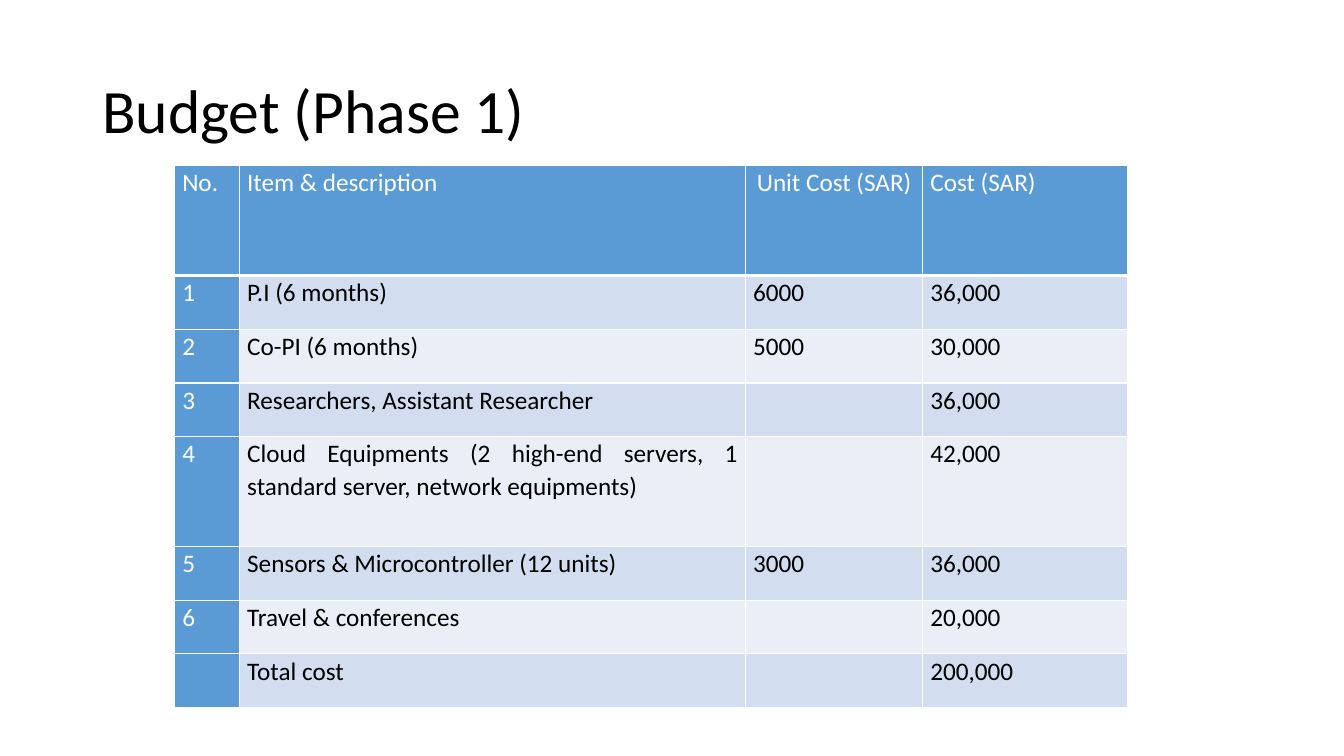
import lxml.etree
import pptx
import pptx.dml.color
import pptx.enum.text
import pptx.oxml.ns
import pptx.util

Pt = pptx.util.Pt
RGBColor = pptx.dml.color.RGBColor
ALIGN = pptx.enum.text.PP_ALIGN
ANCHOR = pptx.enum.text.MSO_ANCHOR

FONT = "Calibri"
BLACK = RGBColor(0x00, 0x00, 0x00)
WHITE = RGBColor(0xFF, 0xFF, 0xFF)
BLUE = RGBColor(0x5B, 0x9B, 0xD5)
BAND_DARK = RGBColor(0xD2, 0xDE, 0xEF)
BAND_LIGHT = RGBColor(0xEA, 0xEF, 0xF7)

BUDGET = [
    ("No.", "Item & description", "Unit Cost (SAR)", "Cost (SAR)"),
    ("1", "P.I (6 months)", "6000", "36,000"),
    ("2", "Co-PI (6 months)", "5000", "30,000"),
    ("3", "Researchers, Assistant Researcher", "", "36,000"),
    ("4", "Cloud Equipments (2 high-end servers, 1 standard server, network equipments)",
     "", "42,000"),
    ("5", "Sensors & Microcontroller (12 units)", "3000", "36,000"),
    ("6", "Travel & conferences", "", "20,000"),
    ("", "Total cost", "", "200,000"),
]
COLUMN_WIDTHS = [46.4, 361.4, 126.6, 146]
TALL_ROWS = (0, 4)
TALL, SHORT = 78.4, 38.4


def add_text(paragraph, text, size, color, spacing, alignment):
    paragraph.alignment = alignment
    paragraph.line_spacing = spacing
    run = paragraph.add_run()
    run.text = text
    run.font.name = FONT
    run.font.size = Pt(size)
    run.font.color.rgb = color


def add_border(cell, side, width):
    qn = pptx.oxml.ns.qn
    properties = cell._tc.get_or_add_tcPr()
    line = lxml.etree.SubElement(properties, qn("a:" + side), w=str(Pt(width)))
    fill = lxml.etree.SubElement(line, qn("a:solidFill"))
    lxml.etree.SubElement(fill, qn("a:srgbClr"), val=str(WHITE))


presentation = pptx.Presentation()
presentation.slide_width = Pt(960)
presentation.slide_height = Pt(540)
slide = presentation.slides.add_slide(presentation.slide_layouts[6])

# Title
title = slide.shapes.add_textbox(Pt(66), Pt(28.8), Pt(828), Pt(104.4))
title.text_frame.word_wrap = True
title.text_frame.vertical_anchor = ANCHOR.MIDDLE
add_text(title.text_frame.paragraphs[0], "Budget (Phase 1)", 44, BLACK, 0.9, ALIGN.LEFT)

# Budget table
row_heights = [TALL if row in TALL_ROWS else SHORT for row in range(len(BUDGET))]
table = slide.shapes.add_table(
    len(BUDGET), len(COLUMN_WIDTHS), Pt(124.8), Pt(118.4),
    Pt(sum(COLUMN_WIDTHS)), Pt(sum(row_heights))).table
table.first_col = True
for column, width in zip(table.columns, COLUMN_WIDTHS):
    column.width = Pt(width)
for row, height in zip(table.rows, row_heights):
    row.height = Pt(height)

# Cells: blue header row and number column, banded body
for row, texts in enumerate(BUDGET):
    for column, text in enumerate(texts):
        cell = table.cell(row, column)
        is_heading = row == 0 or column == 0
        for side in ("lnL", "lnR", "lnT", "lnB"):
            add_border(cell, side, 3 if row == 0 and side == "lnB" else 1)
        cell.fill.solid()
        if is_heading:
            cell.fill.fore_color.rgb = BLUE
        else:
            cell.fill.fore_color.rgb = BAND_DARK if row % 2 else BAND_LIGHT
        cell.margin_left = cell.margin_right = Pt(5.4)
        cell.margin_top = cell.margin_bottom = Pt(0)
        if text:
            centred = row == 0 and column == 2
            add_text(cell.text_frame.paragraphs[0], text, 18,
                     WHITE if is_heading else BLACK, 1.07,
                     ALIGN.CENTER if centred else ALIGN.JUSTIFY)

presentation.save("out.pptx")
